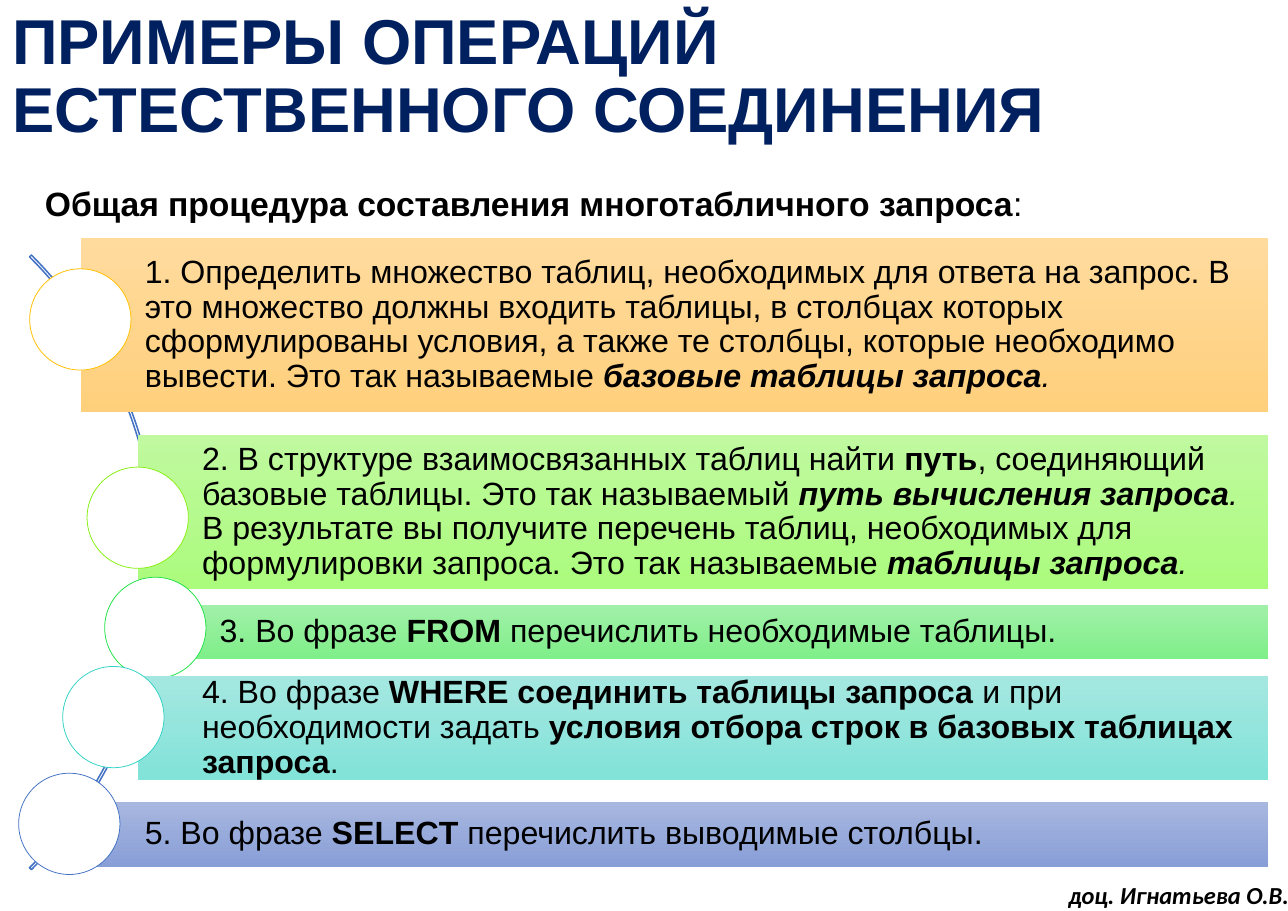
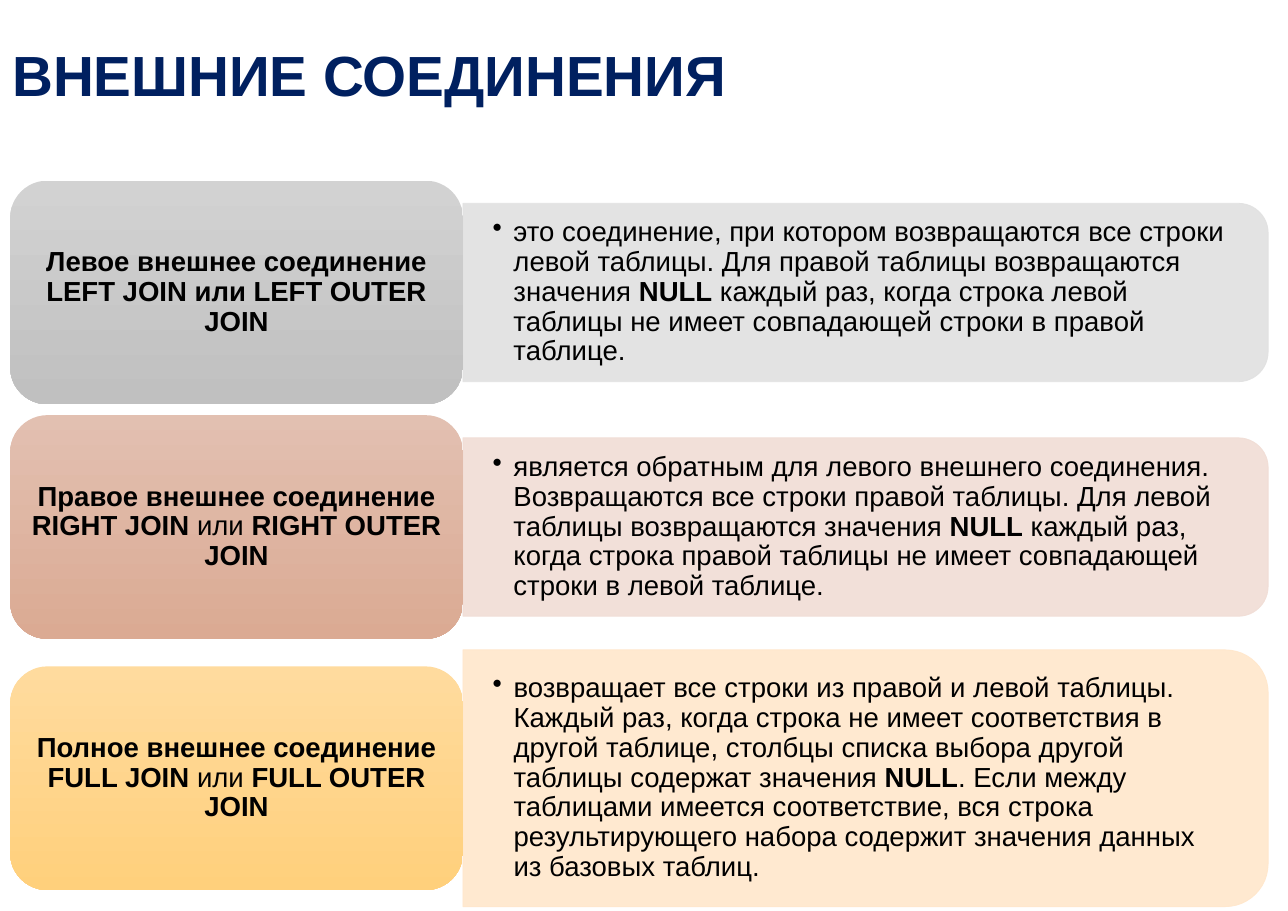
from dataclasses import dataclass

from lxml import etree
from pptx import Presentation
from pptx.dml.color import RGBColor
from pptx.enum import shapes, text
from pptx.oxml import ns
from pptx.util import Pt


@dataclass(frozen=True)
class Theme:
    heading: str = "002060"
    ink: str = "000000"
    paper: str = "FFFFFF"
    arc: str = "4472C4"
    font: str = "Arial"
    author_font: str = "Calibri"
    subtitle_size: float = 22
    step_size: float = 21
    join_size: float = 18
    author_size: float = 16
    spacing: float = 0.9


THEME = Theme()
SLIDE_SIZE = (841.68, 595.44)
TITLE_BOX = (0, 8.6, 841.68, 85)
TITLE_INSETS = (8, 4, 8, 4)

STEPS_TITLE = ("ПРИМЕРЫ ОПЕРАЦИЙ ЕСТЕСТВЕННОГО СОЕДИНЕНИЯ", 41.4)
SUBTITLE = [("Общая процедура составления многотабличного запроса", "b"), (":", "")]
AUTHOR = [("доц. Игнатьева О.В.", "bi")]
STEPS = [
    dict(left=52.6, top=155.5, height=113.8, circle=(19.4, 175.7),
         gradient=("FFDB9E", "FFD07C"), outline="FFC000", content=[
             ("1. Определить множество таблиц, необходимых для ответа на запрос. "
              "В это множество должны входить таблицы, в столбцах которых "
              "сформулированы условия, а также те столбцы, которые необходимо "
              "вывести. Это так называемые ", ""),
             ("базовые таблицы запроса", "bi"), (".", "i")]),
    dict(left=90, top=284.4, height=100.8, circle=(56.9, 305.3),
         gradient=("C0F99F", "ABFB7D"), outline="86F011", content=[
             ("2. В структуре взаимосвязанных таблиц найти ", ""), ("путь", "b"),
             (", соединяющий базовые таблицы. Это так называемый ", ""),
             ("путь вычисления запроса", "bi"), (". ", "i"),
             ("В результате вы получите перечень таблиц, необходимых для "
              "формулировки запроса. Это так называемые ", ""),
             ("таблицы запроса", "bi"), (".", "i")]),
    dict(left=101.5, top=395.3, height=35.3, circle=(68.4, 377.3),
         gradient=("A1F0A9", "7FEF89"), outline="23E148", content=[
             ("3. Во фразе ", ""), ("FROM", "b"),
             (" перечислить необходимые таблицы.", "")]),
    dict(left=90, top=442.1, height=67.7, circle=(41, 435.6),
         gradient=("A4E7E0", "82E3D9"), outline="33D2C5", content=[
             ("4. Во фразе ", ""), ("WHERE соединить таблицы запроса", "b"),
             (" и при необходимости задать ", ""),
             ("условия отбора строк в базовых таблицах запроса", "b"), (".", "")]),
    dict(left=52.6, top=524.2, height=42.5, circle=(12.2, 505.4),
         gradient=("A8B7DF", "889ED7"), outline="4472C4", content=[
             ("5. Во фразе ", ""), ("SELECT", "b"),
             (" перечислить выводимые столбцы.", "")]),
]
STEP_RIGHT = 828.8
CIRCLE = 66.2
ARC_BOX = (-464.4, 83.5, 568.1, 568.1)
ARC_ADJUSTMENTS = (189, 27, 0.003)

JOINS_TITLE = ("ВНЕШНИЕ СОЕДИНЕНИЯ", 37)
JOINS = [
    dict(top=118.1, panel_height=116.6, text_width=520.5,
         gradient=("D2D2D2", "C0C0C0"), panel="E1E1E1",
         name=[("Левое внешнее соединение LEFT JOIN или LEFT OUTER JOIN", "b")],
         content=[
             ("это соединение, при котором возвращаются все строки левой таблицы. "
              "Для правой таблицы возвращаются значения ", ""), ("NULL", "b"),
             (" каждый раз, когда строка левой таблицы не имеет совпадающей "
              "строки в правой таблице.", "")]),
    dict(top=271.4, panel_height=116.6, text_width=520.5,
         gradient=("E2C0B1", "DBAA93"), panel="F1DDD5",
         name=[("Правое внешнее соединение RIGHT JOIN ", "b"), ("или ", ""),
               ("RIGHT OUTER JOIN", "b")],
         content=[
             ("является обратным для левого внешнего соединения. Возвращаются все "
              "строки правой таблицы. Для левой таблицы возвращаются значения ", ""),
             ("NULL", "b"),
             (" каждый раз, когда строка правой таблицы не имеет совпадающей "
              "строки в левой таблице.", "")]),
    dict(top=435.6, panel_height=167.8, text_width=517.7,
         gradient=("FFDB9E", "FFD07C"), panel="FFE7CB",
         name=[("Полное внешнее соединение FULL JOIN ", "b"), ("или ", ""),
               ("FULL OUTER JOIN", "b")],
         content=[
             ("возвращает все строки из правой и левой таблицы. Каждый раз, когда "
              "строка не имеет соответствия в другой таблице, столбцы списка выбора "
              "другой таблицы содержат значения ", ""), ("NULL", "b"),
             (". Если между таблицами имеется соответствие, вся строка "
              "результирующего набора содержит значения данных из базовых таблиц.", "")]),
]
TILE_LEFT, TILE_WIDTH, TILE_HEIGHT = 6.6, 295.9, 146.2
PANEL_LEFT, PANEL_WIDTH, PANEL_OPACITY = 302.5, 526.2, 90
BULLET_INDENT = 13.7


def color(value):
    return RGBColor.from_string(value)


def points(values):
    return [Pt(value) for value in values]


def write(shape, content, size, font=THEME.font, ink=THEME.ink, insets=None,
          align=text.PP_ALIGN.LEFT, anchor=text.MSO_ANCHOR.MIDDLE,
          spacing=THEME.spacing, wrap=True, bullet=False):
    frame = shape.text_frame
    frame.word_wrap = wrap
    frame.auto_size = text.MSO_AUTO_SIZE.NONE
    frame.vertical_anchor = anchor
    if insets:
        (frame.margin_left, frame.margin_top,
         frame.margin_right, frame.margin_bottom) = points(insets)
    paragraph = frame.paragraphs[0]
    if bullet:
        properties = paragraph._p.get_or_add_pPr()
        properties.set("marL", str(Pt(BULLET_INDENT)))
        properties.set("indent", str(-Pt(BULLET_INDENT)))
        etree.SubElement(properties, ns.qn("a:buChar")).set("char", "•")
    paragraph.alignment = align
    paragraph.line_spacing = spacing
    for words, style in content:
        run = paragraph.add_run()
        run.text = words
        run.font.name = font
        run.font.size = Pt(size)
        run.font.bold = "b" in style
        run.font.italic = "i" in style
        run.font.color.rgb = color(ink)


def add_shape(slide, kind, box, fill=None, outline=None, width=0.5):
    shape = slide.shapes.add_shape(kind, *points(box))
    shape.shadow.inherit = False
    if isinstance(fill, tuple):
        shape.fill.gradient()
        shape.fill.gradient_angle = 270
        for stop, value in zip(shape.fill.gradient_stops, fill):
            stop.color.rgb = color(value)
    elif fill:
        shape.fill.solid()
        shape.fill.fore_color.rgb = color(fill)
    else:
        shape.fill.background()
    if outline:
        shape.line.color.rgb = color(outline)
        shape.line.width = Pt(width)
    else:
        shape.line.fill.background()
    return shape


def add_text(slide, box, content, size, **options):
    write(slide.shapes.add_textbox(*points(box)), content, size, **options)


def set_opacity(shape, percent):
    for solid in shape._element.spPr.iter(ns.qn("a:srgbClr")):
        etree.SubElement(solid, ns.qn("a:alpha")).set("val", str(percent * 1000))


def add_slide(presentation, title, size):
    slide = presentation.slides.add_slide(presentation.slide_layouts[5])
    shape = slide.shapes.title
    shape.left, shape.top, shape.width, shape.height = points(TITLE_BOX)
    write(shape, [(title, "b")], size, ink=THEME.heading, insets=TITLE_INSETS)
    return slide


def build_steps(presentation):
    slide = add_slide(presentation, *STEPS_TITLE)
    add_text(slide, (22.3, 116, 668.9, 33.8), SUBTITLE, THEME.subtitle_size, spacing=1)
    add_text(slide, (691.2, 571.7, 160.6, 26.6), AUTHOR, THEME.author_size,
             font=THEME.author_font, anchor=text.MSO_ANCHOR.TOP, spacing=1, wrap=False)
    arc = add_shape(slide, shapes.MSO_SHAPE.BLOCK_ARC, ARC_BOX, outline=THEME.arc, width=1)
    for index, value in enumerate(ARC_ADJUSTMENTS):
        arc.adjustments[index] = value
    for step in STEPS:
        box = (step["left"], step["top"], STEP_RIGHT - step["left"], step["height"])
        band = add_shape(slide, shapes.MSO_SHAPE.RECTANGLE, box, step["gradient"])
        write(band, step["content"], THEME.step_size, insets=(42, 4, 4, 4))
        add_shape(slide, shapes.MSO_SHAPE.OVAL, (*step["circle"], CIRCLE, CIRCLE),
                  THEME.paper, step["outline"])


def build_joins(presentation):
    slide = add_slide(presentation, *JOINS_TITLE)
    for join in JOINS:
        height = join["panel_height"]
        middle = join["top"] + TILE_HEIGHT / 2
        upright = (PANEL_LEFT + (PANEL_WIDTH - height) / 2, middle - PANEL_WIDTH / 2,
                   height, PANEL_WIDTH)
        panel = add_shape(slide, shapes.MSO_SHAPE.ROUND_2_SAME_RECTANGLE, upright,
                          join["panel"], join["panel"])
        panel.rotation = 90
        set_opacity(panel, PANEL_OPACITY)
        add_text(slide, (PANEL_LEFT, middle - height / 2, join["text_width"], height),
                 join["content"], THEME.join_size, insets=(19.4, 10, 19.4, 10), bullet=True)
        tile = add_shape(slide, shapes.MSO_SHAPE.ROUNDED_RECTANGLE,
                         (TILE_LEFT, join["top"], TILE_WIDTH, TILE_HEIGHT), join["gradient"])
        write(tile, join["name"], THEME.join_size, insets=(5, 3, 5, 3),
              align=text.PP_ALIGN.CENTER)


def main():
    presentation = Presentation()
    presentation.slide_width, presentation.slide_height = points(SLIDE_SIZE)
    build_steps(presentation)
    build_joins(presentation)
    presentation.save("out.pptx")


if __name__ == "__main__":
    main()
